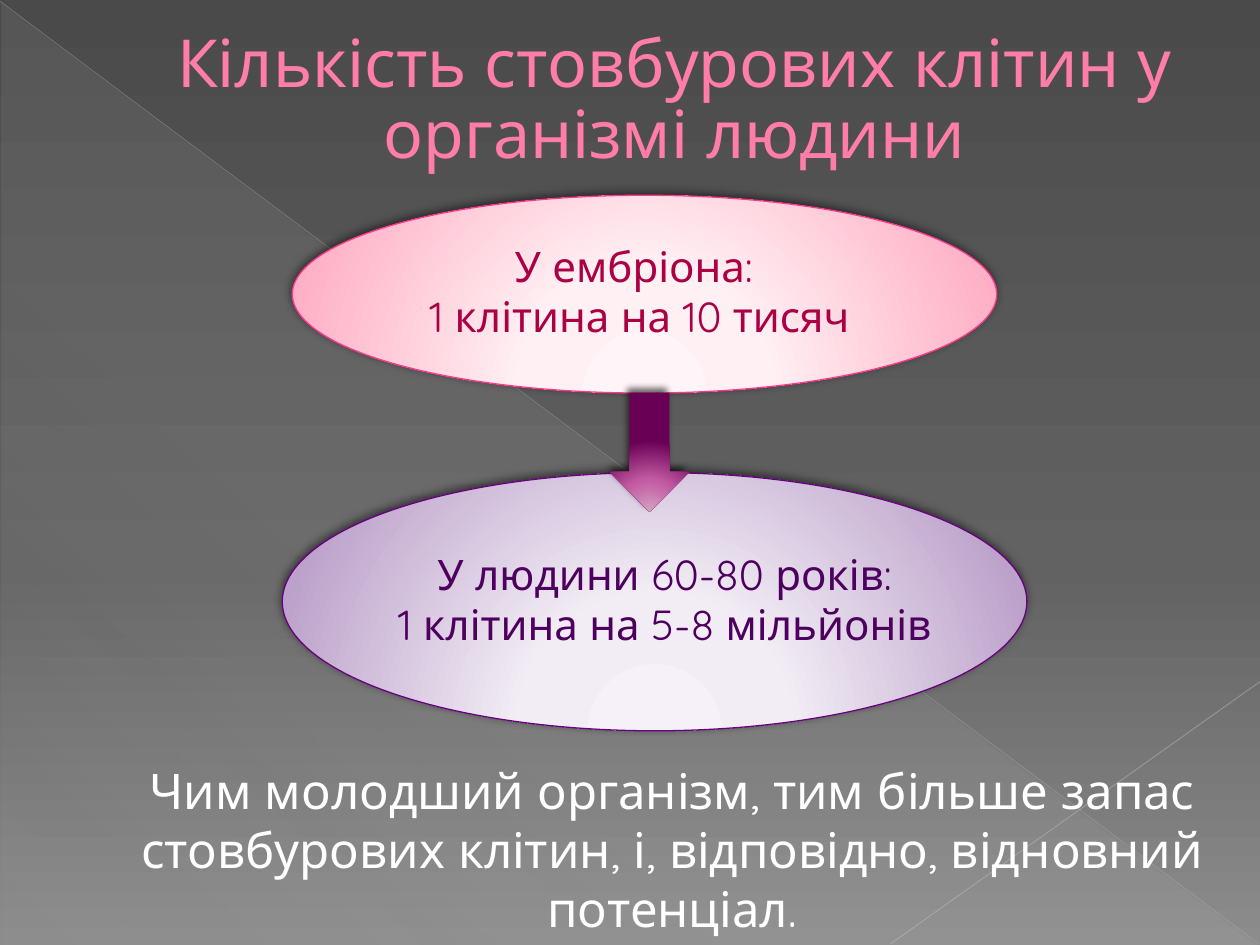
from lxml import etree
from pptx import Presentation
from pptx.dml.color import RGBColor as RGB
from pptx.enum.shapes import MSO_CONNECTOR as LINK, MSO_SHAPE as SHAPE
from pptx.enum.text import MSO_ANCHOR as ANCHOR, PP_ALIGN as ALIGN
from pptx.oxml import parse_xml
from pptx.oxml.ns import nsdecls, qn
from pptx.util import Inches, Pt

FONT = "Quicksand"
NS = nsdecls("a")
HEX = {
    "title": "FF7DA7", "edge": "B12761", "rose": "AB0043", "plum": "4E005F",
    "white": "FFFFFF", "pink": "FF388C", "violet": "68007F", "veil": "D2D2D2",
}
RADIAL = ('<a:path path="circle"><a:fillToRect l="50000" t="155000" '
          'r="50000" b="-55000"/></a:path>')


def blend(fill, root, stops, way):
    """Give root a gradient of (position, colour, opacity) stops."""
    fill.solid()
    marks = "".join(
        f'<a:gs pos="{pos * 1000}"><a:srgbClr val="{tint}">'
        f'<a:alpha val="{alpha * 1000}"/></a:srgbClr></a:gs>'
        for pos, tint, alpha in stops)
    old = root.find(qn("a:solidFill"))
    root.replace(old, parse_xml(
        f'<a:gradFill {NS} rotWithShape="1"><a:gsLst>{marks}</a:gsLst>{way}</a:gradFill>'))


def style(par, size, tint):
    par.alignment = ALIGN.CENTER
    for run in par.runs:
        run.font.name = FONT
        run.font.size = Pt(size)
        run.font.color.rgb = RGB.from_string(HEX[tint])


prs = Presentation()
prs.slide_width, prs.slide_height = Inches(10), Inches(7.5)
slide = prs.slides.add_slide(prs.slide_layouts[5])
shapes = slide.shapes
title = shapes.title

# Background
back = slide.background.fill
back.solid()
blend(back, slide.element.find(".//" + qn("p:bgPr")),
      [(0, "4A4A4A", 100), (60, "626262", 100), (100, "8C8C8C", 100)],
      f'<a:lin ang="{90 * 60000}" scaled="0"/>')

veil = shapes.add_shape(SHAPE.RIGHT_TRIANGLE, Inches(0.01), Inches(0.02),
                        Inches(9.98), Inches(7.48))
veil.shadow.inherit = False
veil.line.fill.background()
blend(veil.fill, veil.element.spPr,
      [(0, HEX["veil"], 10), (70, HEX["veil"], 8), (100, HEX["veil"], 1)],
      f'<a:lin ang="{133 * 60000}" scaled="0"/>')

for x1, y1, x2, y2, tint, width, alpha in [
    (0, 0.01, 9.99, 7.49, "BFBFBF", 0.39, 35),
    (10, 5.41, 7.07, 7.49, "C6C6C6", 0.47, 45),
]:
    line = shapes.add_connector(LINK.STRAIGHT, Inches(x1), Inches(y1),
                                Inches(x2), Inches(y2))
    line.line.color.rgb = RGB.from_string(tint)
    line.line.width = Pt(width)
    props = line.element.spPr
    clr = props.find(".//" + qn("a:srgbClr"))
    etree.SubElement(clr, qn("a:alpha")).set("val", str(alpha * 1000))
    etree.SubElement(props, qn("a:effectLst"))

# Title
shapes._spTree.append(title.element)
title.left, title.top = Inches(0.59), Inches(0.36)
title.width, title.height = Inches(9), Inches(1.53)
frame = title.text_frame
frame.text = "Кількість стовбурових клітин у організмі людини"
frame.vertical_anchor = ANCHOR.MIDDLE
frame.margin_bottom = Inches(0.69)
head = frame.paragraphs[0]
head.line_spacing = 0.9
style(head, 37.8, "title")
ppr = head._p.get_or_add_pPr()
ppr.set("marL", str(Inches(0.53)))
ppr.set("indent", "0")
head.runs[0].font._element.insert(0, parse_xml(
    f'<a:ln {NS} w="{Pt(0.5)}"><a:solidFill><a:srgbClr val="{HEX["edge"]}"/>'
    '</a:solidFill></a:ln>'))

# Ovals and the arrow between them
for kind, box, stops, edge, (alpha, blur, dist) in [
    (SHAPE.OVAL, (2.32, 1.55, 5.59, 1.57),
     [(0, "FFF4F7", 100), (34, "FFF0F3", 100), (100, "FFAFC5", 100)], "pink", (50, 5, 2)),
    (SHAPE.OVAL, (2.24, 3.75, 5.91, 2.05),
     [(0, "F6F1F8", 100), (34, "F2EDF5", 100), (100, "BCA1CA", 100)], "violet", (50, 5, 2)),
    (SHAPE.DOWN_ARROW, (4.84, 3.12, 0.63, 0.94),
     [(0, "D5A2C3", 100), (46, "C259A1", 100), (100, "690055", 100)], None, (60, 4, 3)),
]:
    shape = shapes.add_shape(kind, *map(Inches, box))
    shape.shadow.inherit = False
    if edge:
        shape.line.color.rgb = RGB.from_string(HEX[edge])
        shape.line.width = Pt(0.75)
    else:
        shape.line.fill.background()
    props = shape.element.spPr
    blend(shape.fill, props, stops, RADIAL)
    props.find(qn("a:effectLst")).append(parse_xml(
        f'<a:outerShdw {NS} blurRad="{Pt(blur)}" dist="{Pt(dist)}" '
        f'dir="{245 * 60000}" algn="tl" rotWithShape="0"><a:srgbClr val="000000">'
        f'<a:alpha val="{alpha * 1000}"/></a:srgbClr></a:outerShdw>'))

# Captions
for box, words, size, tint in [
    ((3.03, 1.86, 4.09, 0.91), "У ембріона: \n1 клітина на 10 тисяч", 24, "rose"),
    ((3.03, 4.3, 4.49, 0.91), "У людини 60-80 років:\n1 клітина на 5-8 мільйонів", 24, "plum"),
    ((0.67, 5.99, 9.33, 1.51),
     "Чим молодший організм, тим більше запас стовбурових клітин, і, "
     "відповідно, відновний потенціал.", 28, "white"),
]:
    frame = shapes.add_textbox(*map(Inches, box)).text_frame
    frame.word_wrap = True
    frame.text = words
    for par in frame.paragraphs:
        style(par, size, tint)

prs.save("out.pptx")
